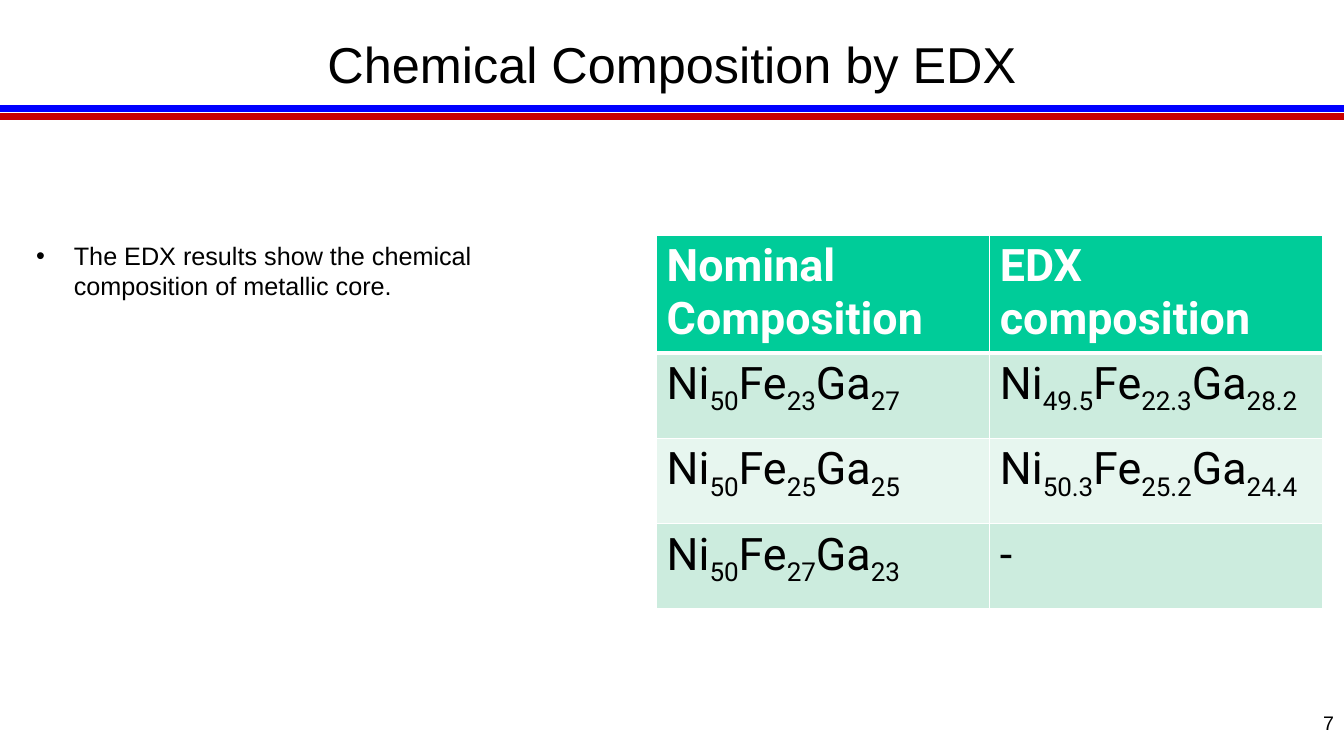
from dataclasses import dataclass

from lxml import etree
from pptx import Presentation
from pptx.dml.color import RGBColor
from pptx.enum.shapes import MSO_CONNECTOR, MSO_SHAPE
from pptx.enum.text import MSO_ANCHOR, PP_ALIGN
from pptx.oxml.ns import qn
from pptx.util import Pt

STRAIGHT = MSO_CONNECTOR.STRAIGHT
RECTANGLE = MSO_SHAPE.RECTANGLE
TOP, MIDDLE = MSO_ANCHOR.TOP, MSO_ANCHOR.MIDDLE
LEFT, CENTER, RIGHT = PP_ALIGN.LEFT, PP_ALIGN.CENTER, PP_ALIGN.RIGHT

BLACK = RGBColor(0x00, 0x00, 0x00)
WHITE = RGBColor(0xFF, 0xFF, 0xFF)
BLUE = RGBColor(0x00, 0x00, 0xFF)
RED = RGBColor(0xC8, 0x00, 0x00)
GREEN = RGBColor(0x00, 0xCC, 0x99)
MINT = RGBColor(0xCC, 0xEC, 0xDE)
PALE_MINT = RGBColor(0xE7, 0xF6, 0xEF)

PAGE_WIDTH, PAGE_HEIGHT = 960, 540
ROW_HEIGHT = 61
COLUMN_WIDTH = 238


@dataclass(frozen=True)
class Rule:
    y: float
    color: RGBColor


@dataclass(frozen=True)
class Style:
    size: float
    font: str = "Arial"
    color: RGBColor = BLACK
    bold: bool = False


@dataclass(frozen=True)
class Label:
    text: str
    left: float
    top: float
    width: float
    height: float
    style: Style
    align: PP_ALIGN = LEFT
    anchor: MSO_ANCHOR = TOP
    bullet: bool = False


@dataclass(frozen=True)
class Alloy:
    """Shares of Ni, Fe and Ga."""
    nickel: str
    iron: str
    gallium: str


RULES = [Rule(77.4, BLUE), Rule(83, RED)]
HEADING = Style(32, "Roboto", WHITE, True)
FORMULA = Style(32, "Roboto")
LABELS = [
    Label("Chemical Composition by EDX", 72, 0, 816, 90, Style(36), CENTER, MIDDLE),
    Label("The EDX results show the chemical composition of metallic core.",
          18.7, 168, 421, 187, Style(18), bullet=True),
]
PAGE_NUMBER = Label("7", 888, 504, 72, 36, Style(14), RIGHT)
HEADINGS = ["Nominal Composition", "EDX composition"]
ALLOYS = [
    (Alloy("50", "23", "27"), Alloy("49.5", "22.3", "28.2")),
    (Alloy("50", "25", "25"), Alloy("50.3", "25.2", "24.4")),
    (Alloy("50", "27", "23"), None),
]


def add_span(para, text: str, style: Style, subscript: bool = False) -> None:
    span = para.add_run()
    span.text = text
    span.font.size = Pt(style.size)
    span.font.name = style.font
    span.font.bold = style.bold
    span.font.color.rgb = style.color
    if subscript:
        span.font._element.set("baseline", "-25000")


def add_bullet(para) -> None:
    para.space_before = Pt(3.6)
    properties = para._p.get_or_add_pPr()
    properties.set("marL", str(Pt(27)))
    properties.set("indent", str(-Pt(27)))
    etree.SubElement(properties, qn("a:buFont")).set("typeface", "Arial")
    etree.SubElement(properties, qn("a:buChar")).set("char", "•")


def fill_label(box, label: Label) -> None:
    frame = box.text_frame
    frame.word_wrap = True
    frame.vertical_anchor = label.anchor
    para = frame.paragraphs[0]
    para.alignment = label.align
    if label.bullet:
        add_bullet(para)
    add_span(para, label.text, label.style)


def add_rule(page, rule: Rule) -> None:
    line = page.shapes.add_connector(
        STRAIGHT, Pt(0), Pt(rule.y), Pt(PAGE_WIDTH), Pt(rule.y))
    line.line.color.rgb = rule.color
    line.line.width = Pt(5)
    etree.SubElement(line._element.spPr, qn("a:effectLst"))


def add_label(page, label: Label) -> None:
    box = page.shapes.add_textbox(
        Pt(label.left), Pt(label.top), Pt(label.width), Pt(label.height))
    fill_label(box, label)


def add_page_number(page, label: Label) -> None:
    box = page.shapes.add_shape(
        RECTANGLE, Pt(label.left), Pt(label.top), Pt(label.width), Pt(label.height))
    box.shadow.inherit = False
    box.fill.solid()
    box.fill.fore_color.rgb = WHITE
    box.line.fill.background()
    fill_label(box, label)


def paint_cell(cell, color: RGBColor, top: float, bottom: float) -> None:
    properties = cell._tc.get_or_add_tcPr()
    for side, width in (("L", 1), ("R", 1), ("T", top), ("B", bottom)):
        border = etree.SubElement(properties, qn(f"a:ln{side}"), w=str(Pt(width)))
        paint = etree.SubElement(border, qn("a:solidFill"))
        etree.SubElement(paint, qn("a:srgbClr")).set("val", str(WHITE))
    cell.fill.solid()
    cell.fill.fore_color.rgb = color


def write_alloy(para, alloy: Alloy | None) -> None:
    if alloy is None:
        add_span(para, "-", FORMULA)
        return
    shares = (("Ni", alloy.nickel), ("Fe", alloy.iron), ("Ga", alloy.gallium))
    for element, share in shares:
        add_span(para, element, FORMULA)
        add_span(para, share, FORMULA, subscript=True)


def add_composition_table(page) -> None:
    row_count = len(ALLOYS) + 1
    table = page.shapes.add_table(
        row_count, len(HEADINGS), Pt(469), Pt(168),
        Pt(COLUMN_WIDTH * len(HEADINGS)), Pt(ROW_HEIGHT * row_count)).table
    table.first_row = False
    table.horz_banding = False
    for column, heading in enumerate(HEADINGS):
        cell = table.cell(0, column)
        paint_cell(cell, GREEN, 1, 3)
        add_span(cell.text_frame.paragraphs[0], heading, HEADING)
    for row, alloys in enumerate(ALLOYS, start=1):
        for column, alloy in enumerate(alloys):
            cell = table.cell(row, column)
            paint_cell(cell, MINT if row % 2 else PALE_MINT, 3 if row == 1 else 1, 1)
            write_alloy(cell.text_frame.paragraphs[0], alloy)


def main() -> None:
    deck = Presentation()
    deck.slide_width, deck.slide_height = Pt(PAGE_WIDTH), Pt(PAGE_HEIGHT)
    page = deck.slides.add_slide(deck.slide_layouts[6])

    # Header rules
    for rule in RULES:
        add_rule(page, rule)

    # Title and remark
    for label in LABELS:
        add_label(page, label)

    # Compositions and page number
    add_composition_table(page)
    add_page_number(page, PAGE_NUMBER)

    deck.save("out.pptx")


if __name__ == "__main__":
    main()
